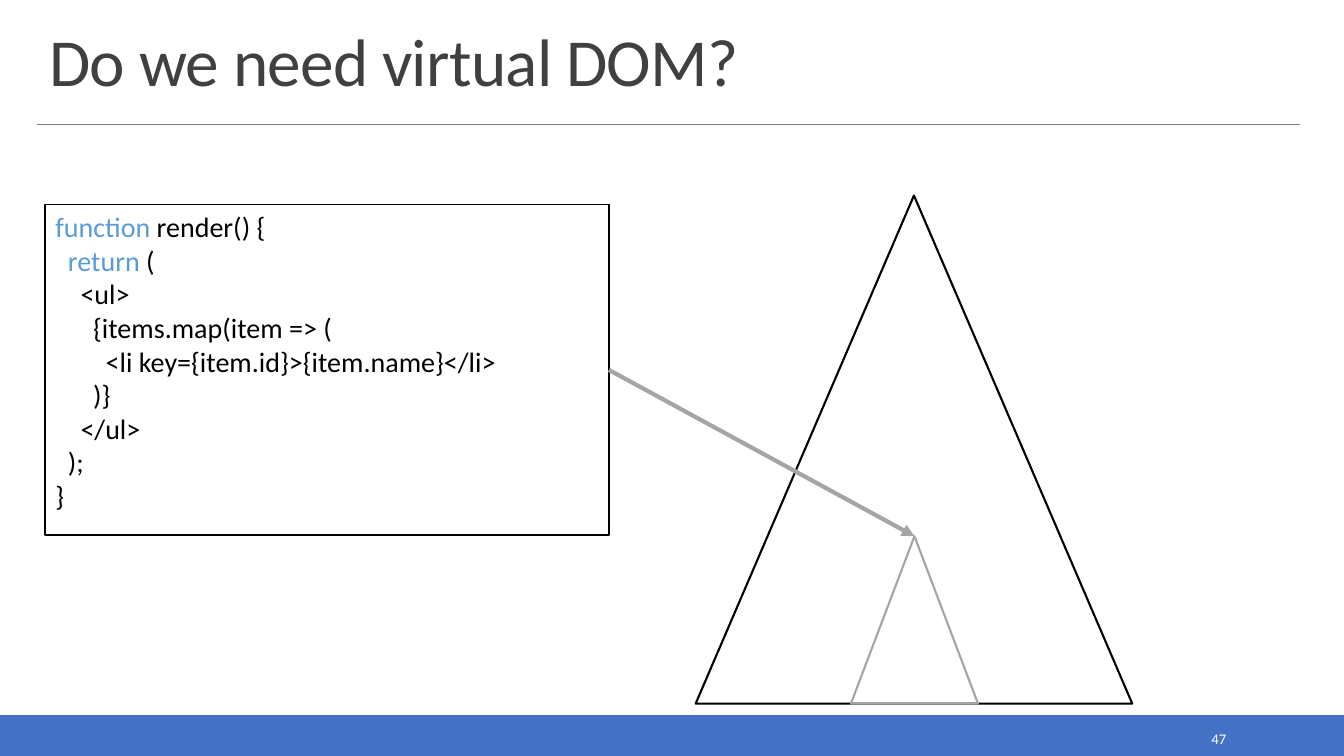
from pptx import Presentation
from pptx.dml.color import RGBColor
from pptx.enum.shapes import MSO_CONNECTOR as Link, MSO_SHAPE as Shape
from pptx.enum.text import MSO_ANCHOR as Anchor, PP_ALIGN as Align
from pptx.oxml.ns import qn
from pptx.util import Pt
from lxml.etree import SubElement

PX = 9144  # 100 px to the inch
BLACK, GRAY, BLUE, KEY = "000000", "A5A5A5", "4472C4", "5B9BD5"
INDENT = 12.5  # px for each nesting level of the code

deck = Presentation()
deck.slide_width, deck.slide_height = 1333 * PX, 750 * PX
slide = deck.slides.add_slide(deck.slide_layouts[6])
shapes = slide.shapes


def rgb(code):
    return RGBColor.from_string(code)


def style(font, size, color):
    font.name, font.size = "Calibri", Pt(size)
    font.color.rgb = rgb(color)


# Footer bar, triangles and code box
outlines = [
    (Shape.RECTANGLE, (0, 710, 1333, 40), BLUE, 1.25, BLUE),
    (Shape.ISOSCELES_TRIANGLE, (690, 194, 433, 504), BLACK, 1.5, None),
    (Shape.ISOSCELES_TRIANGLE, (844, 532, 126, 166), GRAY, 1.5, None),
    (Shape.RECTANGLE, (45, 203, 559, 328), BLACK, 1.25, None),
]
for kind, place, color, width, fill in outlines:
    box = shapes.add_shape(kind, *(n * PX for n in place))
    box.shadow.inherit = False
    box.line.color.rgb, box.line.width = rgb(color), Pt(width)
    if fill:
        box.fill.solid()
        box.fill.fore_color.rgb = rgb(fill)
    else:
        box.fill.background()

# Code: nesting level, keyword, rest of the line
code = [
    (0, "function", " render() {"),
    (1, "return", " ("),
    (2, "", "<ul>"),
    (3, "", "{items.map(item => ("),
    (4, "", "<li key={item.id}>{item.name}</li>"),
    (3, "", ")}"),
    (2, "", "</ul>"),
    (1, "", ");"),
    (0, "", "}"),
]
frame = box.text_frame
frame.word_wrap = True
frame.vertical_anchor = Anchor.TOP
for row, (level, word, rest) in enumerate(code):
    para = frame.add_paragraph() if row else frame.paragraphs[0]
    para.alignment = Align.LEFT
    para._p.get_or_add_pPr().set("marL", str(int(level * INDENT * PX)))
    style(para.font, 20, BLACK)
    for text, color in ((word, KEY), (rest, BLACK)):
        if text:
            run = para.add_run()
            run.text = text
            style(run.font, 20, color)

# Title and slide number
labels = [
    ("Do we need virtual DOM?", (39, 20, 1252, 84), 48, "404040",
     Anchor.BOTTOM, Align.LEFT),
    ("47", (1083, 719, 143, 28), 10.5, "FFFFFF", Anchor.MIDDLE, Align.RIGHT),
]
for text, place, size, color, anchor, align in labels:
    label = shapes.add_textbox(*(n * PX for n in place))
    frame = label.text_frame
    frame.word_wrap = True
    frame.vertical_anchor = anchor
    para = frame.paragraphs[0]
    para.text, para.alignment = text, align
    style(para.font, size, color)
    if size == 48:
        para.line_spacing = 0.85
        para.runs[0]._r.get_or_add_rPr().set("spc", "-50")

# Title rule, then the arrow from the code to the subtree
lines = [
    ((37, 123, 1289, 123), "808080", 0.5, False),
    ((604, 367, 907, 532), GRAY, 3, True),
]
for ends, color, width, arrow in lines:
    link = shapes.add_connector(Link.STRAIGHT, *(n * PX for n in ends))
    link.line.color.rgb, link.line.width = rgb(color), Pt(width)
    if arrow:
        SubElement(link.line._get_or_add_ln(), qn("a:tailEnd"), type="triangle")
    SubElement(link._element.spPr, qn("a:effectLst"))

deck.save("out.pptx")
